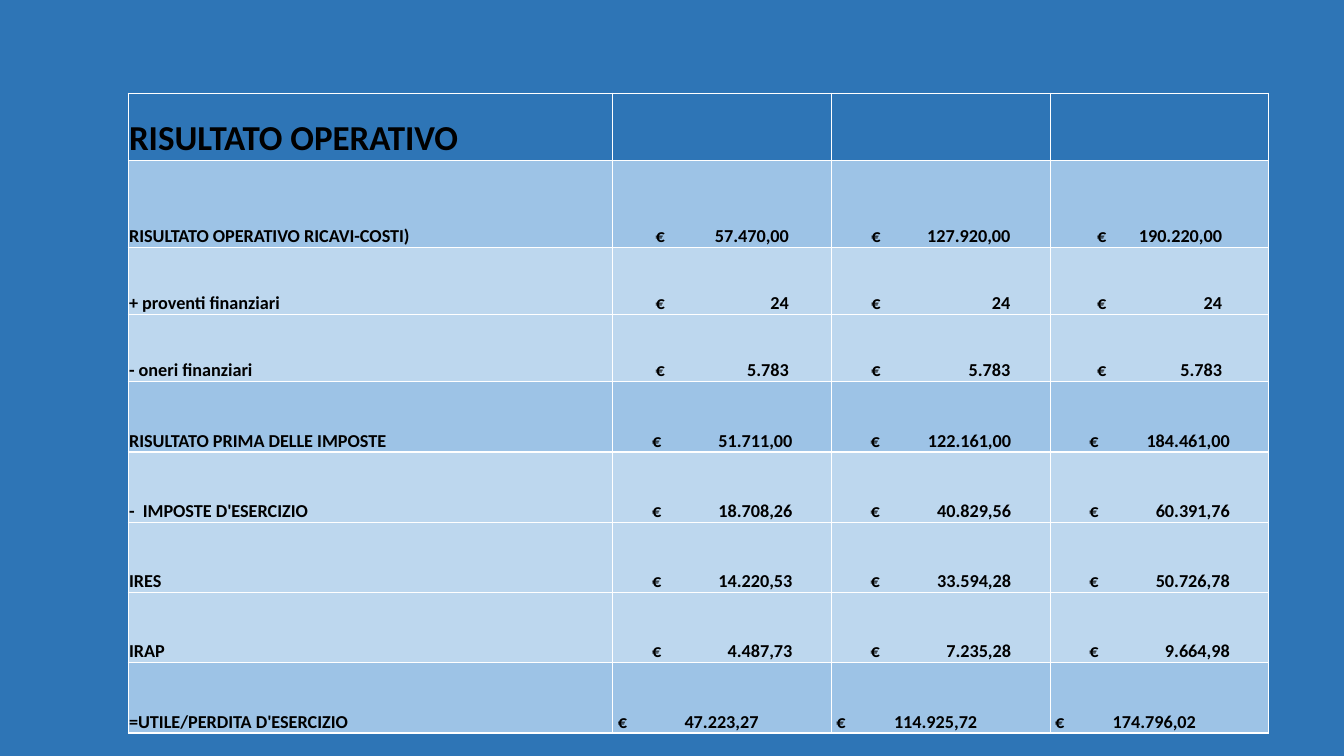
from lxml.etree import SubElement
from pptx import Presentation
from pptx.dml.color import RGBColor
from pptx.enum.text import MSO_ANCHOR
from pptx.oxml.ns import qn
from pptx.util import Pt

BLUE, MID_BLUE, PALE_BLUE = "2E75B6", "9DC3E6", "BDD7EE"
WHITE, BLACK = "FFFFFF", "000000"
LABEL_WIDTH, AMOUNT_WIDTH = 346.3, 156.2
EDGE = 0.7

# Insets that place the euro sign in each year's column
WIDE_INSETS = (30.5, 28.5, 33.5)
EVEN_INSETS = (28, 28, 28)
TOTAL_INSETS = (3.5, 3.5, 3.5)
TOTAL_TAB = 100.5

# label, amounts, fill, height, label line spacing, insets
ROWS = [
    ("RISULTATO OPERATIVO RICAVI-COSTI)", ("57.470,00", "127.920,00", "190.220,00"),
     MID_BLUE, 62.5, 1.15, WIDE_INSETS),
    ("+ proventi finanziari", ("24", "24", "24"),
     PALE_BLUE, 47.9, Pt(14.3), WIDE_INSETS),
    ("- oneri finanziari", ("5.783", "5.783", "5.783"),
     PALE_BLUE, 47.9, Pt(14.3), WIDE_INSETS),
    ("RISULTATO PRIMA DELLE IMPOSTE", ("51.711,00", "122.161,00", "184.461,00"),
     MID_BLUE, 50.2, Pt(15.6), EVEN_INSETS),
    ("-  IMPOSTE D'ESERCIZIO", ("18.708,26", "40.829,56", "60.391,76"),
     PALE_BLUE, 50.2, Pt(15.6), EVEN_INSETS),
    ("IRES", ("14.220,53", "33.594,28", "50.726,78"),
     PALE_BLUE, 50.2, Pt(15.6), EVEN_INSETS),
    ("IRAP", ("4.487,73", "7.235,28", "9.664,98"),
     PALE_BLUE, 50.2, Pt(15.6), EVEN_INSETS),
    ("=UTILE/PERDITA D'ESERCIZIO", ("47.223,27", "114.925,72", "174.796,02"),
     MID_BLUE, 50.2, Pt(15.6), TOTAL_INSETS),
]


def paint(fill, color):
    fill.solid()
    fill.fore_color.rgb = RGBColor.from_string(color)


def style_cell(cell, color):
    """White borders, solid fill, text at the bottom."""
    properties = cell._tc.get_or_add_tcPr()
    for side in ("a:lnL", "a:lnR", "a:lnT", "a:lnB"):
        border = SubElement(properties, qn(side), w=str(Pt(1)))
        border_fill = SubElement(border, qn("a:solidFill"))
        SubElement(border_fill, qn("a:srgbClr"), val=WHITE)
    paint(cell.fill, color)
    cell.vertical_anchor = MSO_ANCHOR.BOTTOM
    cell.margin_left = cell.margin_right = cell.margin_top = Pt(EDGE)
    cell.margin_bottom = 0


def write(cell, text, size=13, spacing=1.15, tab=None):
    cell.text = text
    paragraph = cell.text_frame.paragraphs[0]
    paragraph.line_spacing = spacing
    if tab:
        stops = SubElement(paragraph._p.get_or_add_pPr(), qn("a:tabLst"))
        SubElement(stops, qn("a:tab"), pos=str(Pt(tab)), algn="r")
    font = paragraph.font
    font.name, font.size, font.bold = "Calibri", Pt(size), True
    font.color.rgb = RGBColor.from_string(BLACK)


def write_amount(cell, amount, inset, spacing, tab):
    cell.margin_left = Pt(inset)
    write(cell, f"€\t{amount}", spacing=spacing, tab=tab)


def add_income_table(slide):
    heights = [47.9] + [row[3] for row in ROWS]
    widths = [LABEL_WIDTH] + [AMOUNT_WIDTH] * 3
    table = slide.shapes.add_table(
        len(heights), len(widths), Pt(91.5), Pt(66.6),
        Pt(sum(widths)), Pt(sum(heights))).table
    for column, width in zip(table.columns, widths):
        column.width = Pt(width)
    for row, height in zip(table.rows, heights):
        row.height = Pt(height)

    # Heading row
    for cell in table.rows[0].cells:
        style_cell(cell, BLUE)
    write(table.cell(0, 0), "RISULTATO OPERATIVO", size=25)

    # Result rows
    for index, (label, amounts, color, _, spacing, insets) in enumerate(ROWS, 1):
        cells = list(table.rows[index].cells)
        for cell in cells:
            style_cell(cell, color)
        write(cells[0], label, spacing=spacing)
        is_total = insets is TOTAL_INSETS
        for cell, amount, inset in zip(cells[1:], amounts, insets):
            tab = TOTAL_TAB if is_total else AMOUNT_WIDTH - 2 * inset
            write_amount(cell, amount, inset, spacing if is_total else 1.15, tab)


def main():
    presentation = Presentation()
    presentation.slide_width, presentation.slide_height = Pt(960), Pt(540)
    slide = presentation.slides.add_slide(presentation.slide_layouts[6])
    paint(slide.background.fill, BLUE)
    add_income_table(slide)
    presentation.save("out.pptx")


if __name__ == "__main__":
    main()
